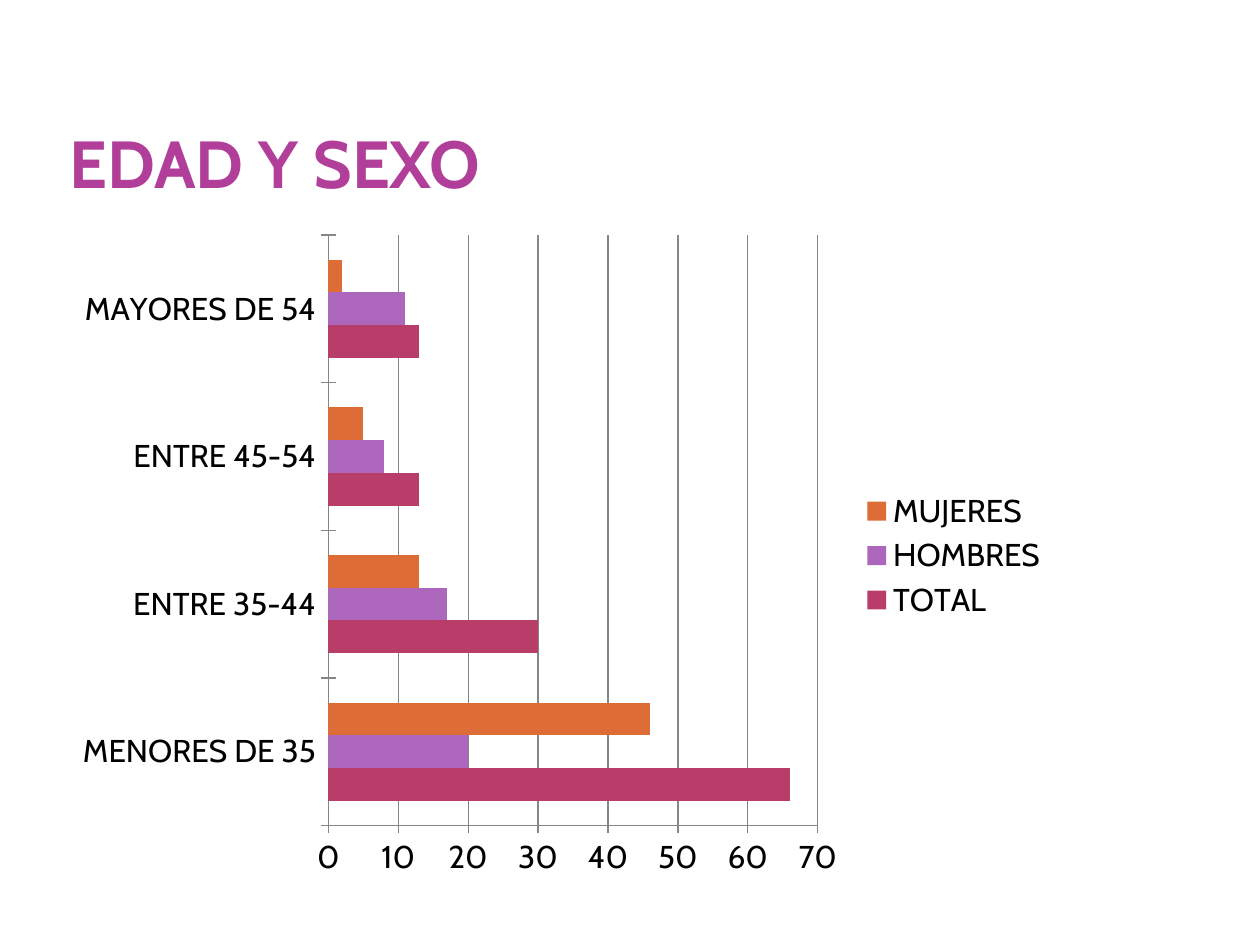
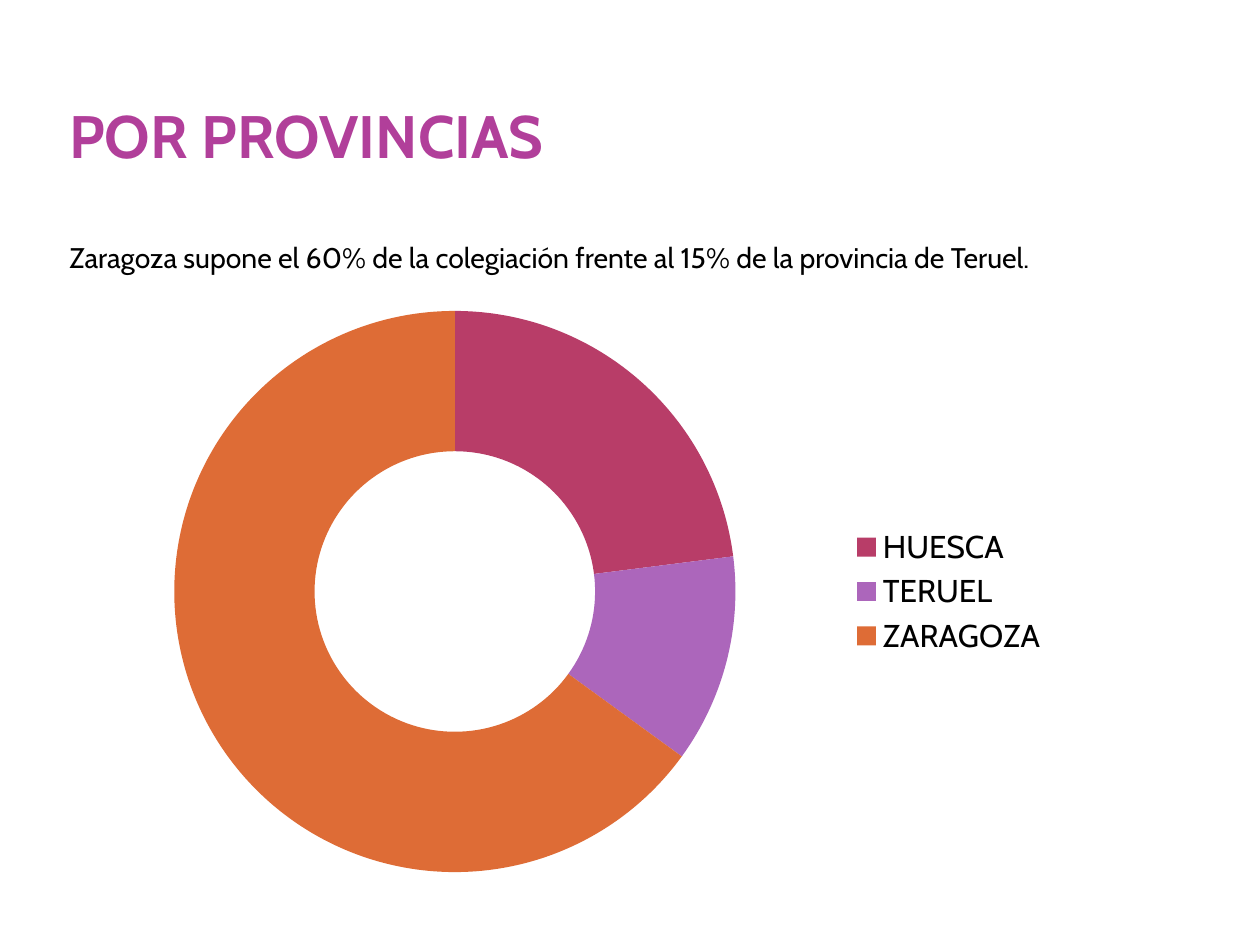
from pptx import Presentation
from pptx.chart.data import CategoryChartData
from pptx.dml.color import RGBColor
from pptx.enum import chart as ch, text
from pptx.util import Inches, Pt

FONT = "Cabin"
LEFT, WIDTH, TOP = 0.5, 7.92, 0.35
COLORS = {
    "title": "B13F9A",
    "text": "000000",
    "grid": "868686",
    "raspberry": "B83D68",
    "violet": "AC66BB",
    "orange": "DE6C36",
}
PALETTE = ("raspberry", "violet", "orange")


def rgb(name):
    return RGBColor.from_string(COLORS[name])


def set_font(font, size, color, bold=False):
    font.name = FONT
    font.size = Pt(size)
    font.bold = bold
    font.color.rgb = rgb(color)


def add_line(p, content, size, color, bold=False):
    r = p.add_run()
    r.text = content
    set_font(r.font, size, color, bold)


def add_heading(slide, title, size, height, note=None):
    box = slide.shapes.add_textbox(Inches(LEFT), Inches(TOP), Inches(WIDTH), Inches(height))
    tf = box.text_frame
    tf.word_wrap = True
    tf.vertical_anchor = text.MSO_ANCHOR.BOTTOM
    tf.margin_left = tf.margin_right = Inches(0.05)
    tf.margin_top = tf.margin_bottom = 0
    add_line(tf.paragraphs[0], title, size, "title", True)
    if note:
        p = tf.add_paragraph()
        p.space_before = Pt(40)
        add_line(p, note, 16.2, "text")


def add_chart(slide, kind, top, height, categories, series):
    data = CategoryChartData()
    data.categories = categories
    for name, values in series:
        data.add_series(name, values)
    frame = slide.shapes.add_chart(
        kind, Inches(LEFT), Inches(top), Inches(WIDTH), Inches(height), data)
    chart = frame.chart
    set_font(chart.font, 18, "text")
    chart.has_title = False
    chart.has_legend = True
    chart.legend.position = ch.XL_LEGEND_POSITION.RIGHT
    chart.legend.include_in_layout = False
    return chart


def paint(items):
    for item, color in zip(items, PALETTE):
        item.format.fill.solid()
        item.format.fill.fore_color.rgb = rgb(color)


def style_axis(axis, grid):
    axis.major_tick_mark = ch.XL_TICK_MARK.CROSS
    axis.minor_tick_mark = ch.XL_TICK_MARK.NONE
    axis.has_major_gridlines = grid
    lines = [axis.format.line]
    if grid:
        lines.append(axis.major_gridlines.format.line)
    for line in lines:
        line.color.rgb = rgb("grid")
        line.width = Pt(0.75)


def add_bar_chart(slide, top, height, categories, series):
    chart = add_chart(slide, ch.XL_CHART_TYPE.BAR_CLUSTERED, top, height, categories, series)
    plot = chart.plots[0]
    plot.vary_by_categories = False
    plot.gap_width = 150
    paint(plot.series)
    style_axis(chart.category_axis, False)
    style_axis(chart.value_axis, True)


def add_doughnut_chart(slide, top, height, categories, series):
    chart = add_chart(slide, ch.XL_CHART_TYPE.DOUGHNUT, top, height, categories, series)
    plot = chart.plots[0]
    plot.vary_by_categories = True
    points = plot.series[0].points
    paint([points[i] for i in range(len(categories))])


def main():
    prs = Presentation()
    prs.slide_width, prs.slide_height = Inches(10), Inches(7.5)
    blank = prs.slide_layouts[6]

    s = prs.slides.add_slide(blank)
    add_heading(s, "EDAD Y SEXO", 38, 1.25)
    add_bar_chart(
        s, 1.76, 5.3,
        ["MENORES DE 35", "ENTRE 35-44", "ENTRE 45-54", "MAYORES DE 54"],
        [("TOTAL", (66, 30, 13, 13)),
         ("HOMBRES", (20, 17, 8, 11)),
         ("MUJERES", (46, 13, 5, 2))])

    s = prs.slides.add_slide(blank)
    add_heading(
        s, "POR PROVINCIAS", 34.2, 1.83,
        "Zaragoza supone el 60% de la colegiación frente al 15% de la provincia de Teruel.")
    add_doughnut_chart(
        s, 2.33, 4.73,
        ["HUESCA", "TERUEL", "ZARAGOZA"],
        [("Series 1", (23, 12, 65))])

    prs.save("out.pptx")


if __name__ == "__main__":
    main()
